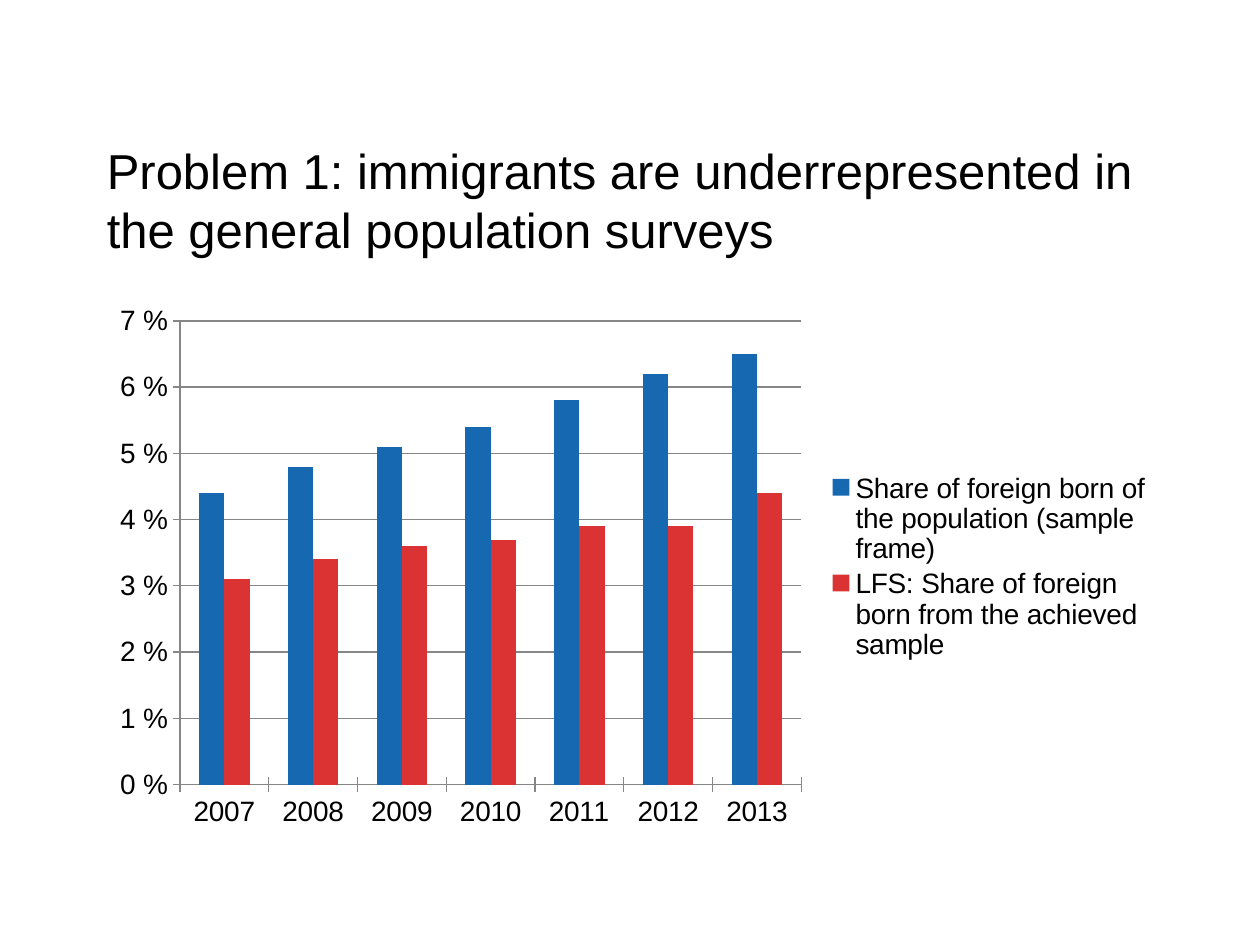
from dataclasses import dataclass

from lxml.etree import SubElement
from pptx import Presentation
from pptx.chart.data import CategoryChartData
from pptx.dml.color import RGBColor
from pptx.enum.chart import XL_CHART_TYPE, XL_LEGEND_POSITION, XL_TICK_MARK
from pptx.enum.text import MSO_ANCHOR, PP_ALIGN
from pptx.oxml.ns import qn
from pptx.util import Cm, Pt

COLORS = {"text": "000000", "axis": "868686", "population": "1668B1", "survey": "DB3334"}
FONT = "Arial"
LEFT, WIDTH = Cm(1.9), Cm(21.6)


@dataclass(frozen=True)
class Share:
    name: str
    values: tuple[float, ...]
    color: str


YEARS = [str(year) for year in range(2007, 2014)]
SHARES = [
    Share("Share of foreign born of the population (sample frame)",
          (0.044, 0.048, 0.051, 0.054, 0.058, 0.062, 0.065), "population"),
    Share("LFS: Share of foreign born from the achieved sample",
          (0.031, 0.034, 0.036, 0.037, 0.039, 0.039, 0.044), "survey"),
]


def rgb(name: str) -> RGBColor:
    return RGBColor.from_string(COLORS[name])


def style_font(font, size: int) -> None:
    font.name = FONT
    font.size = Pt(size)
    font.bold = False
    font.color.rgb = rgb("text")


def style_line(line) -> None:
    line.color.rgb = rgb("axis")
    line.width = Pt(0.75)


def place(part, x: float, y: float, w: float, h: float, inner: bool = False) -> None:
    """Position a plot area or legend by fractions of the chart's size."""
    layout = part.find(qn("c:layout"))
    if layout is None:
        layout = SubElement(part, qn("c:layout"))
        anchor = part.find(qn("c:legendPos"))
        if anchor is None:
            part.insert(0, layout)
        else:
            anchor.addnext(layout)
    manual = SubElement(layout, qn("c:manualLayout"))
    settings = {"layoutTarget": "inner"} if inner else {}
    settings |= {"xMode": "edge", "yMode": "edge", "x": x, "y": y, "w": w, "h": h}
    for tag, value in settings.items():
        SubElement(manual, qn(f"c:{tag}")).set("val", str(value))


def add_title(slide, wording: str) -> None:
    title = slide.shapes.title
    title.left, title.top, title.width, title.height = LEFT, Cm(2.33), WIDTH, Cm(3.39)
    frame = title.text_frame
    frame.text = wording
    frame.word_wrap = True
    frame.vertical_anchor = MSO_ANCHOR.MIDDLE
    paragraph = frame.paragraphs[0]
    paragraph.alignment = PP_ALIGN.LEFT
    style_font(paragraph.runs[0].font, 28)


def add_share_chart(slide, shares: list[Share]) -> None:
    data = CategoryChartData(number_format="0.0%")
    data.categories = YEARS
    for share in shares:
        data.add_series(share.name, share.values)
    chart = slide.shapes.add_chart(
        XL_CHART_TYPE.COLUMN_CLUSTERED, LEFT, Cm(5.92), WIDTH, Cm(11), data).chart
    chart.has_title = False
    style_font(chart.font, 16)

    plot = chart.plots[0]
    plot.gap_width = 150
    plot.overlap = 0
    plot.vary_by_categories = False
    for series, share in zip(plot.series, shares):
        series.format.fill.solid()
        series.format.fill.fore_color.rgb = rgb(share.color)

    for axis in (chart.category_axis, chart.value_axis):
        axis.major_tick_mark = XL_TICK_MARK.CROSS
        axis.minor_tick_mark = XL_TICK_MARK.NONE
        style_line(axis.format.line)
    percent = chart.value_axis
    percent.minimum_scale, percent.maximum_scale, percent.major_unit = 0, 0.07, 0.01
    percent.has_major_gridlines = True
    style_line(percent.major_gridlines.format.line)
    percent.tick_labels.number_format = r"0\ %"
    percent.tick_labels.number_format_is_linked = False

    chart.has_legend = True
    legend = chart.legend
    legend.position = XL_LEGEND_POSITION.RIGHT
    legend.include_in_layout = False
    style_font(legend.font, 16)
    place(chart.element.find(".//" + qn("c:plotArea")), 0.08, 0.05, 0.58, 0.85, inner=True)
    place(chart.element.find(".//" + qn("c:legend")), 0.68, 0.32, 0.31, 0.36)


def main() -> None:
    deck = Presentation()
    deck.slide_width, deck.slide_height = Cm(25.4), Cm(19.05)
    slide = deck.slides.add_slide(deck.slide_layouts[5])
    add_title(slide, "Problem 1: immigrants are underrepresented in "
                     "the general population surveys")
    add_share_chart(slide, SHARES)
    deck.save("out.pptx")


if __name__ == "__main__":
    main()
